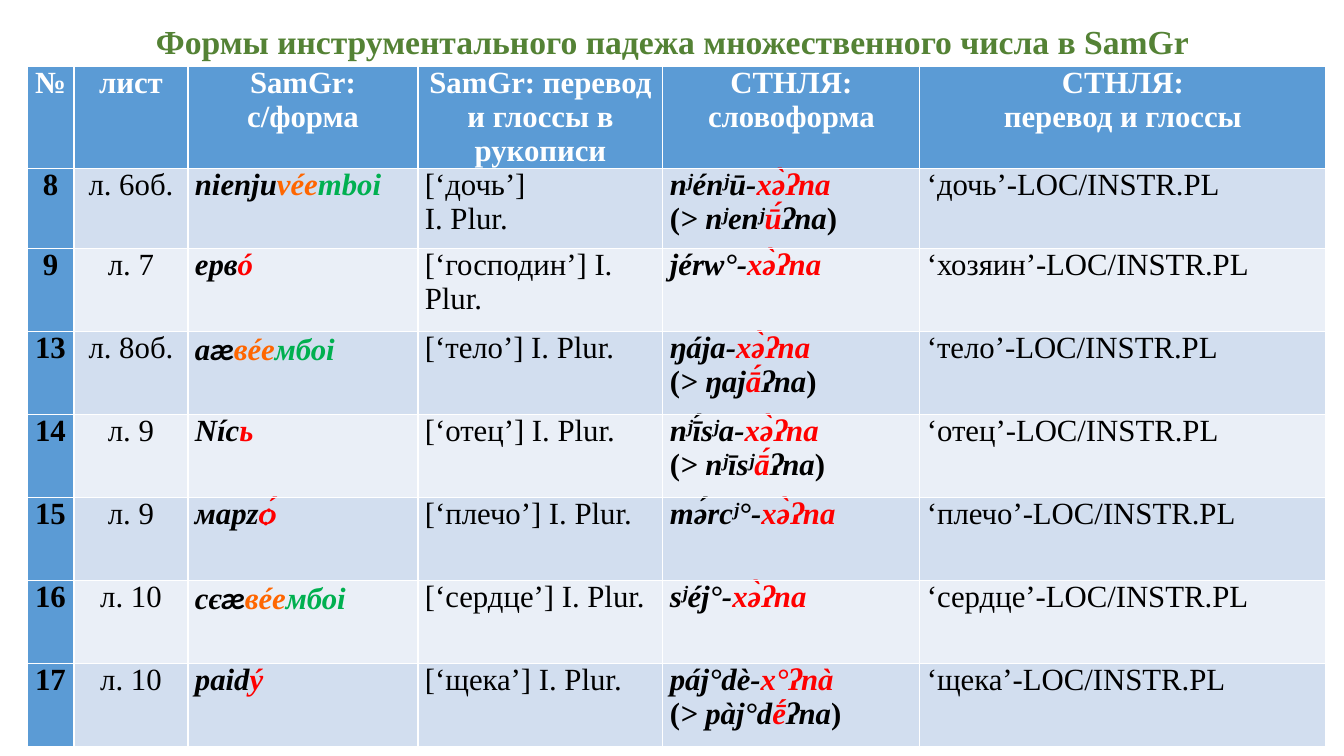
from pptx import Presentation
from pptx.dml.color import RGBColor
from pptx.enum.text import MSO_ANCHOR, PP_ALIGN
from pptx.util import Emu, Pt

SLIDE_W, SLIDE_H = 1344, 756
EMU_PER_PX = 914400 / 100.8
SERIF, SANS = "Times New Roman", "Calibri"
WHITE, BLACK, TITLE_GREEN = "FFFFFF", "000000", "548235"
RED, ORANGE, GREEN = "FF0000", "FF6600", "00B050"
BLUE, BANDS = "5B9BD5", ("D2DEEF", "EAEFF7")

COLUMN_WIDTHS = (47, 114, 230, 245, 257, 406)
HEADER_HEIGHT, FIRST_ROW_HEIGHT, ROW_HEIGHT = 92, 80, 83
HEADERS = ("№", "лист", "SamGr:\nc/форма", "SamGr: перевод и глоссы в рукописи",
           "СТНЛЯ:\ncловоформа", "СТНЛЯ:\nперевод и глоссы")

# number, leaf, manuscript form as (text, colour) parts, manuscript gloss,
# (stem, ending, contracted stem, contracted vowel), translation
ENTRIES = (
    ("8", "л. 6об.", (("nienju", BLACK), ("vée", ORANGE), ("mboi", GREEN)),
     "[‘дочь’]\nI. Plur.", ("nʲénʲū-", "xə̀ʔna", "nʲenʲ", "ū́"), "дочь"),
    ("9", "л. 7", (("ерв", BLACK), ("ó", RED)),
     "[‘господин’] I. Plur.", ("jérw°-", "xə̀ʔna", "", ""), "хозяин"),
    ("13", "л. 8об.", (("а", BLACK), ("æ", BLACK), ("вéе", ORANGE), ("мбоi", GREEN)),
     "[‘тело’] I. Plur.", ("ŋája-", "xə̀ʔna", "ŋaj", "ā́"), "тело"),
    ("14", "л. 9", (("Níс", BLACK), ("ь", RED)),
     "[‘отец’] I. Plur.", ("nʲī́sʲa-", "xə̀ʔna", "nʲīsʲ", "ā́"), "отец"),
    ("15", "л. 9", (("марz", BLACK), ("ѻ́", RED)),
     "[‘плечо’] I. Plur.", ("mə́rcʲ°-", "xə̀ʔna", "", ""), "плечо"),
    ("16", "л. 10", (("cє", BLACK), ("æ", BLACK), ("вéе", ORANGE), ("мбоi", GREEN)),
     "[‘сердце’] I. Plur.", ("sʲéj°-", "xə̀ʔna", "", ""), "сердце"),
    ("17", "л. 10", (("paid", BLACK), ("ý", RED)),
     "[‘щека’] I. Plur.", ("páj°dè-", "x°ʔnà", "pàj°d", "ḗ"), "щека"),
)


def px(length):
    return Emu(round(length * EMU_PER_PX))


def rgb(hex_color):
    return RGBColor.from_string(hex_color)


def style(font, size, color, bold=False, italic=False, name=SERIF):
    font.name, font.size = name, Pt(size)
    font.bold, font.italic = bold, italic
    font.color.rgb = rgb(color)


def prepare_cell(cell, fill):
    cell.fill.solid()
    cell.fill.fore_color.rgb = rgb(fill)
    cell.margin_left = cell.margin_right = px(7)
    cell.margin_top = cell.margin_bottom = 0


def fill_plain(cell, text, fill, color=BLACK, bold=False, align=PP_ALIGN.LEFT):
    prepare_cell(cell, fill)
    cell.text_frame.text = text
    for paragraph in cell.text_frame.paragraphs:
        paragraph.alignment = align
        for run in paragraph.runs:
            style(run.font, 22, color, bold)


def fill_word_form(cell, lines, fill):
    """Write lines of (text, colour) parts in bold italics, brackets upright."""
    prepare_cell(cell, fill)
    frame = cell.text_frame
    for index, parts in enumerate(lines):
        paragraph = frame.add_paragraph() if index else frame.paragraphs[0]
        for text, color in parts:
            run = paragraph.add_run()
            run.text = text
            style(run.font, 22, color, True, text not in "()",
                  SANS if text == "æ" else SERIF)


def standard_form(stem, ending, contracted_stem, vowel):
    lines = [((stem, BLACK), (ending, RED))]
    if vowel:
        lines.append((("(", BLACK), (f"> {contracted_stem}", BLACK),
                      (vowel, RED), ("ʔna", BLACK), (")", BLACK)))
    return lines


def add_title(slide, left, top, width, height):
    frame = slide.shapes.add_textbox(px(left), px(top), px(width), px(height)).text_frame
    frame.word_wrap = True
    frame.vertical_anchor = MSO_ANCHOR.MIDDLE
    frame.text = "Формы инструментального падежа множественного числа в SamGr"
    heading = frame.paragraphs[0]
    heading.alignment, heading.line_spacing = PP_ALIGN.CENTER, 0.9
    style(heading.runs[0].font, 24, TITLE_GREEN, bold=True)


def add_forms_table(slide, left, top):
    heights = [HEADER_HEIGHT, FIRST_ROW_HEIGHT] + [ROW_HEIGHT] * (len(ENTRIES) - 1)
    table = slide.shapes.add_table(
        len(heights), len(COLUMN_WIDTHS), px(left), px(top),
        px(sum(COLUMN_WIDTHS)), px(sum(heights))).table
    table.first_col = True
    for column, width in zip(table.columns, COLUMN_WIDTHS):
        column.width = px(width)
    for row, height in zip(table.rows, heights):
        row.height = px(height)

    for column, header in enumerate(HEADERS):
        fill_plain(table.cell(0, column), header, BLUE, WHITE, True, PP_ALIGN.CENTER)
    for index, (number, leaf, form, gloss, standard, meaning) in enumerate(ENTRIES):
        cells = table.rows[index + 1].cells
        band = BANDS[index % 2]
        fill_plain(cells[0], number, BLUE, bold=True, align=PP_ALIGN.CENTER)
        fill_plain(cells[1], leaf, band, align=PP_ALIGN.CENTER)
        fill_word_form(cells[2], [form], band)
        fill_plain(cells[3], gloss, band)
        fill_word_form(cells[4], standard_form(*standard), band)
        fill_plain(cells[5], f"‘{meaning}’-LOC/INSTR.PL", band)


def main():
    deck = Presentation()
    deck.slide_width, deck.slide_height = px(SLIDE_W), px(SLIDE_H)
    slide = deck.slides.add_slide(deck.slide_layouts[6])
    add_forms_table(slide, 27, 66)
    add_title(slide, 93, 22, 1159, 43)
    deck.save("out.pptx")


if __name__ == "__main__":
    main()
